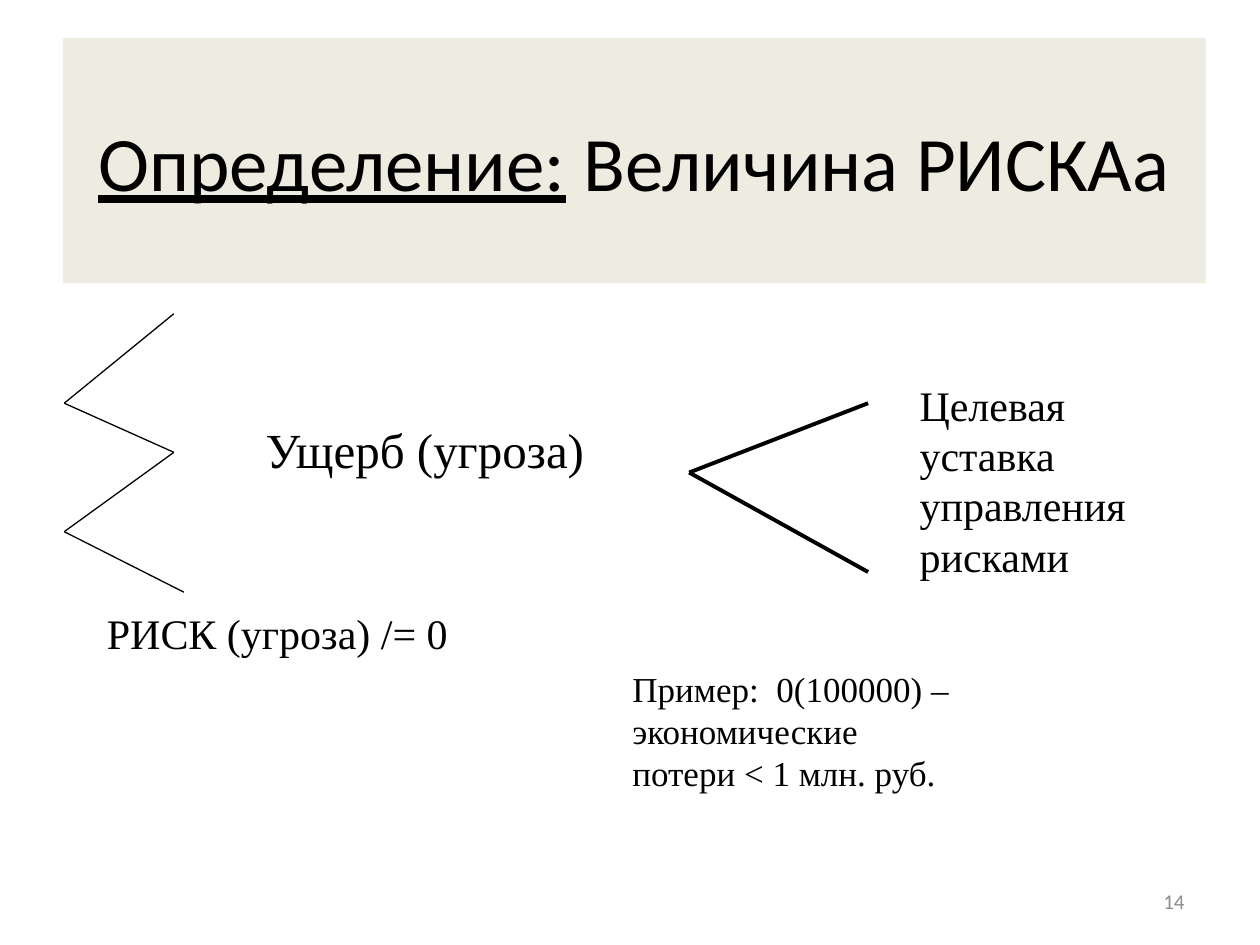
from itertools import pairwise

from lxml import etree
from pptx import Presentation
from pptx.dml.color import RGBColor
from pptx.enum.shapes import MSO_CONNECTOR, MSO_SHAPE
from pptx.enum.text import MSO_ANCHOR, MSO_AUTO_SIZE, PP_ALIGN
from pptx.oxml.ns import qn
from pptx.util import Inches, Pt

LEFT, CENTER, RIGHT = PP_ALIGN.LEFT, PP_ALIGN.CENTER, PP_ALIGN.RIGHT
TOP, MIDDLE = MSO_ANCHOR.TOP, MSO_ANCHOR.MIDDLE
GROW = MSO_AUTO_SIZE.SHAPE_TO_FIT_TEXT
STRAIGHT, RECT = MSO_CONNECTOR.STRAIGHT, MSO_SHAPE.RECTANGLE

COLS, ROWS = 100, 75
WIDTH, HEIGHT = Inches(10), Inches(7.5)
SANS, SERIF = "Calibri", "Times New Roman"
BLACK, GRAY, CREAM = "000000", "8C8C8C", "EEECE1"


def grid(*cells):
    """Turn alternating column and row counts into slide lengths."""
    units = (WIDTH / COLS, HEIGHT / ROWS)
    return [round(cell * units[i % 2]) for i, cell in enumerate(cells)]


def paint(color, tone):
    color.rgb = RGBColor.from_string(tone)


def write(shape, *lines, size=24, font=SERIF, tone=BLACK, align=LEFT,
          anchor=TOP, wrap=True, grow=False):
    """Fill a shape with lines; a line is a list of (text, underline) or a string."""
    frame = shape.text_frame
    frame.word_wrap = wrap
    frame.vertical_anchor = anchor
    if grow:
        frame.auto_size = GROW
    for i, line in enumerate(lines):
        para = frame.paragraphs[0] if i == 0 else frame.add_paragraph()
        para.alignment = align
        parts = [(line, False)] if isinstance(line, str) else line
        for text, under in parts:
            run = para.add_run()
            run.text = text
            run.font.size = Pt(size)
            run.font.name = font
            run.font.underline = under
            paint(run.font.color, tone)


def label(slide, place, *lines, **style):
    write(slide.shapes.add_textbox(*grid(*place)), *lines, **style)


def banner(slide, place, *lines, **style):
    shape = slide.shapes.add_shape(RECT, *grid(*place))
    shape.shadow.inherit = False
    shape.fill.solid()
    paint(shape.fill.fore_color, CREAM)
    shape.line.fill.background()
    write(shape, *lines, **style)


def chain(slide, points, weight):
    """Join neighbouring points with straight lines."""
    for start, end in pairwise(points):
        line = slide.shapes.add_connector(STRAIGHT, *grid(*start, *end))
        line.line.width = Pt(weight)
        paint(line.line.color, BLACK)
        etree.SubElement(line._element.spPr, qn("a:effectLst"))


def main():
    deck = Presentation()
    deck.slide_width, deck.slide_height = WIDTH, HEIGHT
    slide = deck.slides.add_slide(deck.slide_layouts[6])

    banner(slide, (5, 3, 90.7, 19.5),
           [("Определение:", True), (" Величина РИСКАа", False)],
           size=44, font=SANS, align=CENTER, anchor=MIDDLE)

    sigma = [(13.8, 24.9), (5.1, 32), (13.8, 35.9), (5.1, 42.2), (14.6, 47)]
    chain(slide, sigma, 0.75)
    less = [(68.9, 32), (54.7, 37.5), (68.9, 45.4)]
    chain(slide, less, 2.25)

    label(slide, (20.1, 32.8, 29.5, 5.7), "Ущерб (угроза)",
          size=28, wrap=False, grow=True)
    label(slide, (7.5, 47.7, 31, 5), "РИСК (угроза) /= 0",
          wrap=False, grow=True)
    label(slide, (72, 29.6, 20.3, 17), "Целевая", "уставка", "управления",
          "рисками", wrap=False, grow=True)
    label(slide, (49.2, 52.5, 40.9, 11), "Пример:  0(100000) – экономические",
          "потери < 1 млн. руб.", size=20, grow=True)
    label(slide, (71.7, 69.5, 23.3, 4), "14", size=12, font=SANS, tone=GRAY,
          align=RIGHT, anchor=MIDDLE)

    deck.save("out.pptx")


if __name__ == "__main__":
    main()
